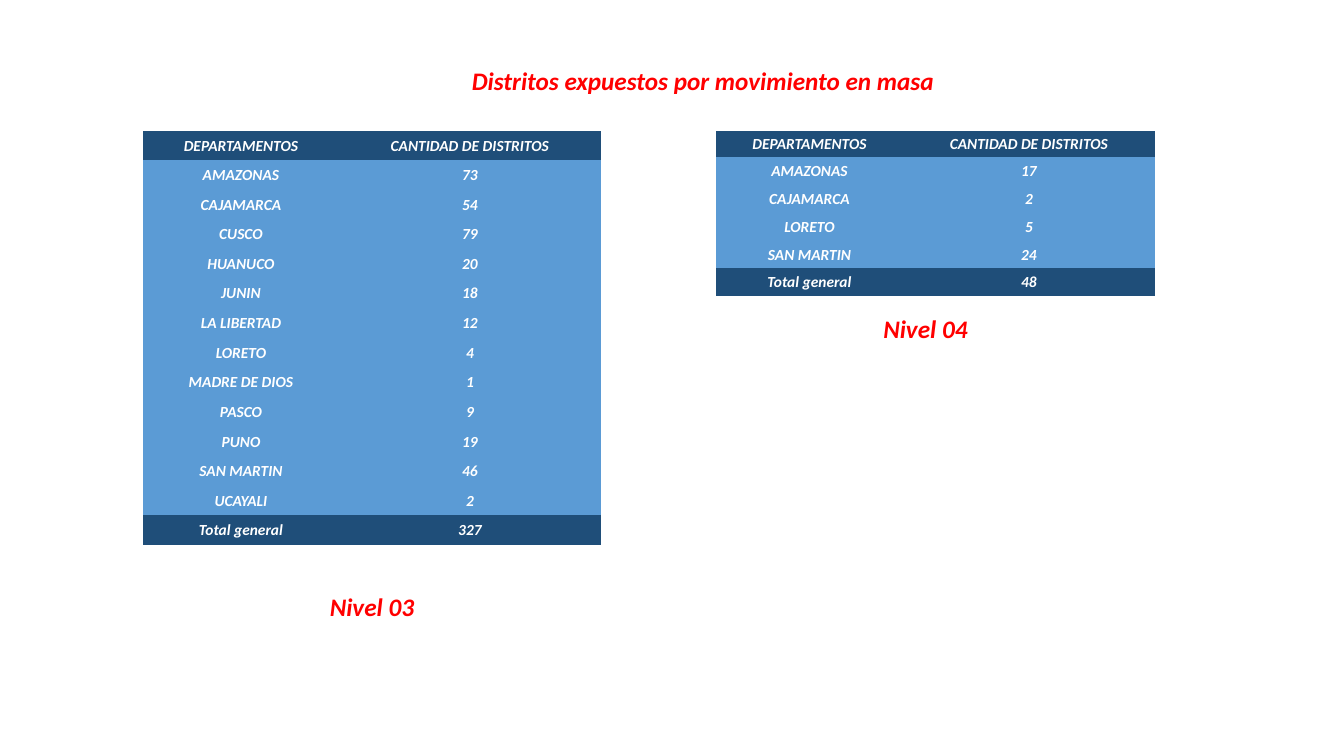
from dataclasses import dataclass

from pptx import Presentation
from pptx.dml.color import RGBColor
from pptx.enum.text import MSO_ANCHOR, MSO_AUTO_SIZE, PP_ALIGN
from pptx.util import Emu, Pt

TITLE = ("Distritos expuestos por movimiento en masa", (459, 60, 488, 40))
HEADER = ("DEPARTAMENTOS", "CANTIDAD DE DISTRITOS")
TOTAL_LABEL = "Total general"

# Boxes are left, top, width, height in px.
LEVELS = [
    {
        "caption": "Nivel 03",
        "caption_box": (318, 586, 108, 40),
        "origin": (143, 131),
        "columns": (196, 262),
        "header_height": 29,
        "height": 414,
        "districts": [
            ("AMAZONAS", 73), ("CAJAMARCA", 54), ("CUSCO", 79),
            ("HUANUCO", 20), ("JUNIN", 18), ("LA LIBERTAD", 12),
            ("LORETO", 4), ("MADRE DE DIOS", 1), ("PASCO", 9),
            ("PUNO", 19), ("SAN MARTIN", 46), ("UCAYALI", 2),
        ],
        "total": 327,
    },
    {
        "caption": "Nivel 04",
        "caption_box": (868, 308, 115, 40),
        "origin": (716, 131),
        "columns": (187, 252),
        "header_height": 26,
        "height": 165,
        "districts": [
            ("AMAZONAS", 17), ("CAJAMARCA", 2), ("LORETO", 5),
            ("SAN MARTIN", 24),
        ],
        "total": 48,
    },
]


@dataclass(frozen=True)
class Theme:
    font: str = "Calibri"
    heading: RGBColor = RGBColor(0xFF, 0x00, 0x00)
    cell_text: RGBColor = RGBColor(0xFF, 0xFF, 0xFF)
    edge_row: RGBColor = RGBColor(0x1F, 0x4E, 0x79)
    body_row: RGBColor = RGBColor(0x5B, 0x9B, 0xD5)
    heading_size: int = 18
    cell_size: int = 11
    plain_table_style: str = "{2D5ABB26-0587-4C30-8999-92F81FD0307C}"


THEME = Theme()


def px(length):
    return Emu(round(length * 914400 / 100.8))


def write(frame, text, size, color):
    paragraph = frame.paragraphs[0]
    paragraph.alignment = PP_ALIGN.CENTER
    run = paragraph.add_run()
    run.text = text
    run.font.name = THEME.font
    run.font.size = Pt(size)
    run.font.bold = run.font.italic = True
    run.font.color.rgb = color


def write_heading(shape, text, wrap):
    frame = shape.text_frame
    frame.word_wrap = wrap
    frame.auto_size = MSO_AUTO_SIZE.SHAPE_TO_FIT_TEXT
    frame.vertical_anchor = MSO_ANCHOR.TOP
    write(frame, text, THEME.heading_size, THEME.heading)


def add_title(slide):
    text, box = TITLE
    title = slide.shapes.title
    title.left, title.top, title.width, title.height = map(px, box)
    write_heading(title, text, wrap=False)


def add_level_table(slide, level):
    rows = [HEADER, *level["districts"], (TOTAL_LABEL, level["total"])]
    columns = level["columns"]
    box = (*level["origin"], sum(columns), level["height"])
    table = slide.shapes.add_table(len(rows), len(columns), *map(px, box)).table
    table.first_row = table.horz_banding = False
    table._tbl.tblPr[0].text = THEME.plain_table_style

    for column, width in zip(table.columns, columns):
        column.width = px(width)

    header_height = level["header_height"]
    row_height = (level["height"] - header_height) / (len(rows) - 1)
    for index, values in enumerate(rows):
        table.rows[index].height = px(row_height if index else header_height)
        at_edge = index in (0, len(rows) - 1)
        for cell, value in zip(table.rows[index].cells, values):
            cell.fill.solid()
            cell.fill.fore_color.rgb = THEME.edge_row if at_edge else THEME.body_row
            cell.vertical_anchor = MSO_ANCHOR.MIDDLE
            cell.margin_left = cell.margin_top = cell.margin_right = px(1)
            cell.margin_bottom = 0
            write(cell.text_frame, str(value), THEME.cell_size, THEME.cell_text)


def main():
    presentation = Presentation()
    presentation.slide_width, presentation.slide_height = px(1344), px(756)
    title_only = presentation.slide_layouts[5]
    slide = presentation.slides.add_slide(title_only)
    add_title(slide)
    for level in LEVELS:
        add_level_table(slide, level)
        caption = slide.shapes.add_textbox(*map(px, level["caption_box"]))
        write_heading(caption, level["caption"], wrap=True)
    presentation.save("out.pptx")


if __name__ == "__main__":
    main()
